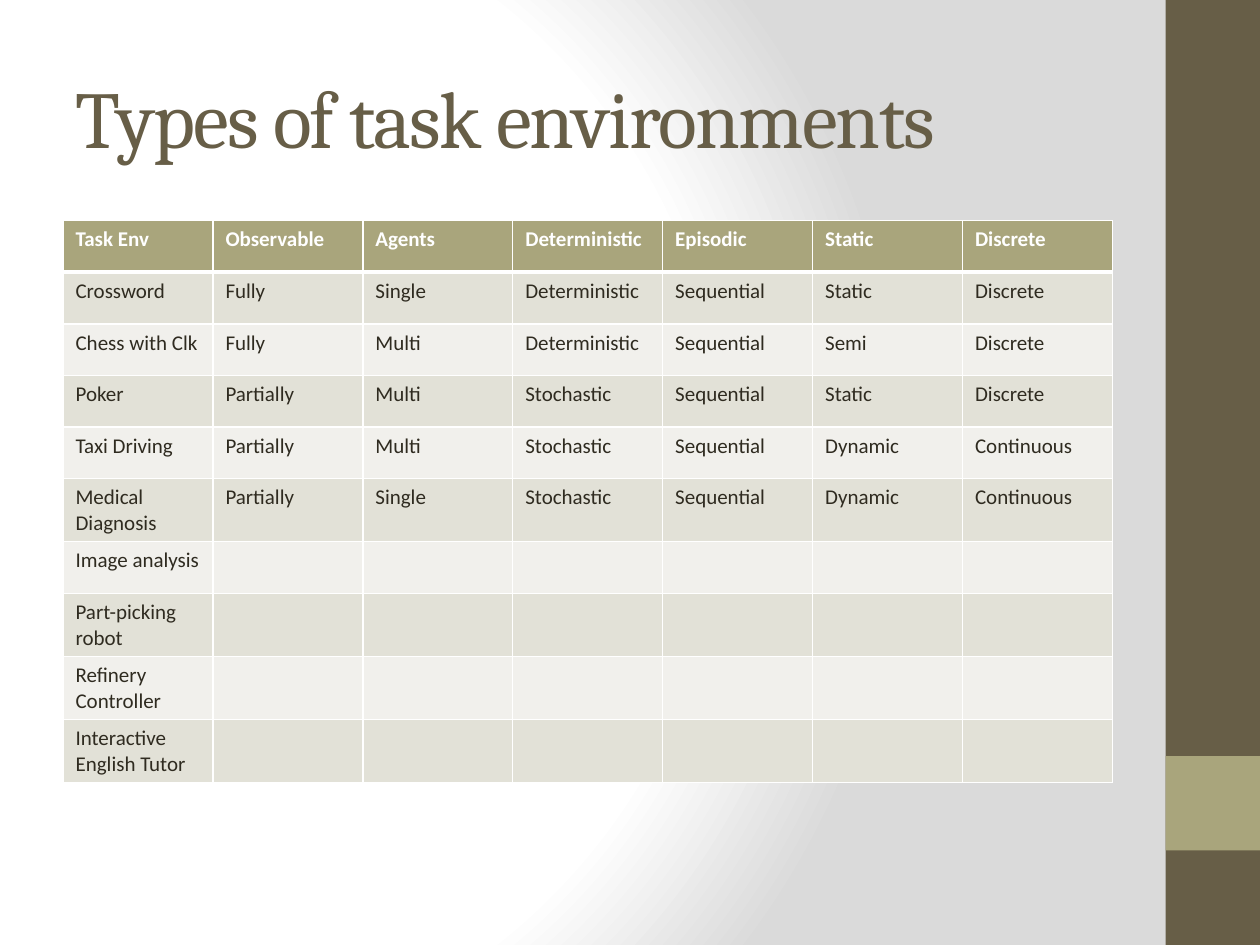
from pptx import Presentation
from pptx.dml.color import RGBColor
from pptx.enum import shapes, text
from pptx.oxml import parse_xml
from pptx.oxml.ns import nsdecls, qn
from pptx.util import Inches, Pt

# Content
TITLE = "Types of task environments"
HEADER = ["Task Env", "Observable", "Agents", "Deterministic", "Episodic", "Static", "Discrete"]
ROWS = [
    ["Crossword", "Fully", "Single", "Deterministic", "Sequential", "Static", "Discrete"],
    ["Chess with Clk", "Fully", "Multi", "Deterministic", "Sequential", "Semi", "Discrete"],
    ["Poker", "Partially", "Multi", "Stochastic", "Sequential", "Static", "Discrete"],
    ["Taxi Driving", "Partially", "Multi", "Stochastic", "Sequential", "Dynamic", "Continuous"],
    ["Medical Diagnosis", "Partially", "Single", "Stochastic", "Sequential", "Dynamic", "Continuous"],
    ["Image analysis"],
    ["Part-picking robot"],
    ["Refinery Controller"],
    ["Interactive English Tutor"],
]
COLORS = {
    "brown": "675E47", "olive": "A9A57C", "ink": "2F2B20", "white": "FFFFFF",
    "gray": "DADADA", "odd_row": "E2E1D7", "even_row": "F1F0EC",
}
BACKGROUND_STOPS = [(0, "white"), (75, "white"), (100, "gray")]
SIDEBAR = [(0, 7.5, "brown"), (6, 0.75, "olive")]  # top, height, colour
TABLE_WIDTH, ROW_HEIGHT = 8.33, 0.41


def rgb(name):
    return RGBColor.from_string(COLORS[name])


def format_run(run, font_name, size, color, bold=False):
    font = run.font
    font.name, font.size, font.bold = font_name, Pt(size), bold
    font.color.rgb = rgb(color)


def set_borders(cell, bottom_width):
    widths = {"lnL": 1, "lnR": 1, "lnT": 1, "lnB": bottom_width}
    properties = cell._tc.get_or_add_tcPr()
    for index, (side, width) in enumerate(widths.items()):
        properties.insert(index, parse_xml(
            f'<a:{side} {nsdecls("a")} w="{Pt(width)}"><a:solidFill>'
            f'<a:srgbClr val="{COLORS["white"]}"/></a:solidFill></a:{side}>'))


presentation = Presentation()
presentation.slide_width, presentation.slide_height = Inches(10), Inches(7.5)
slide = presentation.slides.add_slide(presentation.slide_layouts[6])

# Radial background
slide.background.fill.gradient()
gradient = next(slide._element.iter(qn("a:gradFill")))
stops = "".join(
    f'<a:gs pos="{position * 1000}"><a:srgbClr val="{COLORS[color]}"/></a:gs>'
    for position, color in BACKGROUND_STOPS)
gradient.getparent().replace(gradient, parse_xml(
    f'<a:gradFill {nsdecls("a")} rotWithShape="1"><a:gsLst>{stops}</a:gsLst>'
    '<a:path path="circle"><a:fillToRect l="20000" t="50000" r="100000" b="50000"/>'
    '</a:path></a:gradFill>'))

# Sidebar
for top, height, color in SIDEBAR:
    shape = slide.shapes.add_shape(
        shapes.MSO_SHAPE.RECTANGLE, Inches(9.25), Inches(top), Inches(0.75), Inches(height))
    shape.shadow.inherit = False
    shape.fill.solid()
    shape.fill.fore_color.rgb = rgb(color)
    shape.line.fill.background()

# Title
title = slide.shapes.add_textbox(Inches(0.5), Inches(0.3), Inches(TABLE_WIDTH), Inches(1.25))
title_frame = title.text_frame
title_frame.word_wrap = True
title_frame.vertical_anchor = text.MSO_ANCHOR.MIDDLE
title_frame.text = TITLE
title_run = title_frame.paragraphs[0].runs[0]
format_run(title_run, "Cambria", 46, "brown")
title_run.font._element.set("spc", "-100")

# Table
table_rows = [HEADER] + ROWS
table = slide.shapes.add_table(
    len(table_rows), len(HEADER), Inches(0.5), Inches(1.75),
    Inches(TABLE_WIDTH), Inches(ROW_HEIGHT * len(table_rows))).table
for column in table.columns:
    column.width = Inches(TABLE_WIDTH / len(HEADER))
for row_index, values in enumerate(table_rows):
    is_header = row_index == 0
    row_color = "olive" if is_header else "odd_row" if row_index % 2 else "even_row"
    table.rows[row_index].height = Inches(ROW_HEIGHT)
    for column_index in range(len(HEADER)):
        cell = table.cell(row_index, column_index)
        cell.fill.solid()
        cell.fill.fore_color.rgb = rgb(row_color)
        set_borders(cell, 3 if is_header else 1)
        if column_index < len(values):
            cell.text_frame.text = values[column_index]
            format_run(cell.text_frame.paragraphs[0].runs[0], "Calibri", 12,
                       "white" if is_header else "ink", is_header)

presentation.save("out.pptx")
